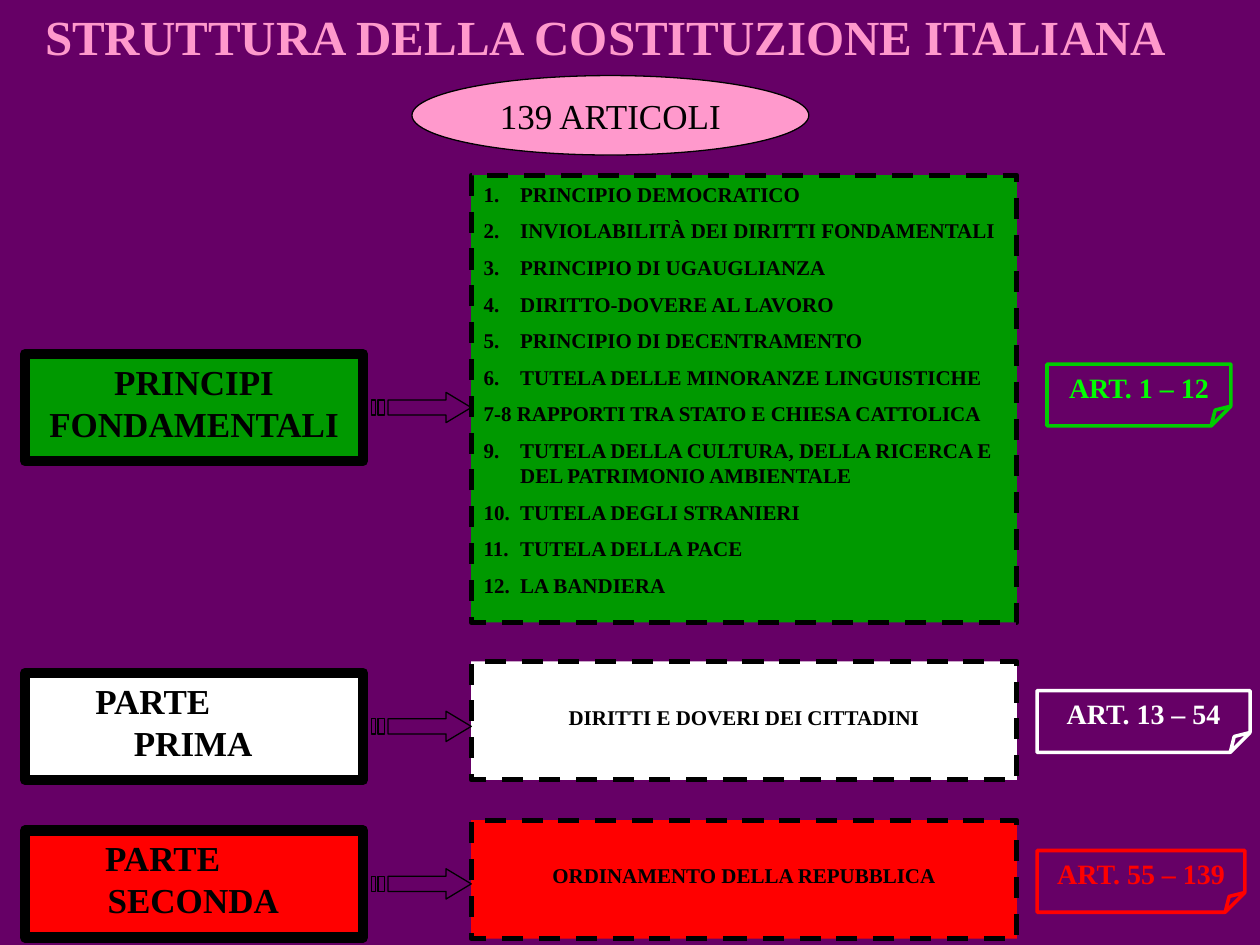
"""Build the slide on the structure of the Italian Constitution."""
from pptx import Presentation
from pptx.dml.color import RGBColor
from pptx.enum.dml import MSO_LINE
from pptx.enum.shapes import MSO_SHAPE as Preset
from pptx.enum.text import MSO_ANCHOR as Anchor, PP_ALIGN as Align
from pptx.oxml.ns import qn
from pptx.util import Pt
from lxml.etree import SubElement

THEME = {
    "font": "Times New Roman",
    "purple": "660066", "pink": "FF99CC", "black": "000000", "white": "FFFFFF",
    "green": "009900", "note_green": "00CC00", "lime": "00FF00", "red": "FF0000",
    "title": 28, "label": 20, "note": 16, "body": 12,
}

TITLE = "STRUTTURA DELLA COSTITUZIONE ITALIANA"
COUNT = "139 ARTICOLI"
PRINCIPLES = [
    "PRINCIPIO DEMOCRATICO",
    "INVIOLABILITÀ DEI DIRITTI FONDAMENTALI",
    "PRINCIPIO DI UGAUGLIANZA",
    "DIRITTO-DOVERE AL LAVORO",
    "PRINCIPIO DI DECENTRAMENTO",
    "TUTELA DELLE MINORANZE LINGUISTICHE",
]
LATER_PRINCIPLES = [
    "7-8 RAPPORTI TRA STATO E CHIESA CATTOLICA",
    "9.\tTUTELA DELLA CULTURA, DELLA RICERCA E DEL PATRIMONIO AMBIENTALE",
    "10.\tTUTELA DEGLI STRANIERI",
    "11.\tTUTELA DELLA PACE",
    "12.\tLA BANDIERA",
]
ROWS = [
    {"label": "PRINCIPI FONDAMENTALI", "label_top": 202.3, "label_format": {},
     "body": None, "body_top": 100.1, "body_height": 255.6, "fill": "green",
     "note": "ART. 1 – 12", "note_box": (598.3, 208.1, 105.1),
     "note_line": "note_green", "note_text": "lime"},
    {"label": "PARTE\vPRIMA", "label_top": 384.5,
     "label_format": {"align": Align.LEFT, "margin": 55, "indent": -22},
     "body": "DIRITTI E DOVERI DEI CITTADINI", "body_top": 378, "body_height": 67.7,
     "fill": "white", "note": "ART. 13 – 54", "note_box": (592.6, 394.6, 121.7),
     "note_line": "white", "note_text": "white"},
    {"label": "PARTE\vSECONDA", "label_top": 474.5,
     "label_format": {"align": Align.LEFT, "margin": 40, "indent": -1.4},
     "body": "ORDINAMENTO DELLA REPUBBLICA", "body_top": 468.7, "body_height": 67.7,
     "fill": "red", "note": "ART. 55 – 139", "note_box": (592.6, 486, 118.8),
     "note_line": "red", "note_text": "red"},
]

LABEL_LEFT, LABEL_WIDTH, LABEL_HEIGHT = 14.4, 193, 61.2
BODY_LEFT, BODY_WIDTH = 269.3, 311.8
NOTE_HEIGHT, NOTE_FOLD = 35.3, 0.32
ARROW_LEFT = 212.4
ARROW_HEAD, ARROW_STEM = 8.64, 4.32
STRIPES = [(0, 2.16), (3.6, 7.2)]
STEM_START, HEAD_START, TIP = 9.36, 42.5, 56.9


def color(name):
    return RGBColor.from_string(THEME[name])


def write(frame, text, size="body", ink="black", bold=True, align=Align.CENTER,
          margin=0, indent=0, numbered=False, before=0, first=True):
    """Write one formatted paragraph into a text frame."""
    paragraph = frame.paragraphs[0] if first else frame.add_paragraph()
    paragraph.text = text
    paragraph.alignment = align
    paragraph.space_before = Pt(before)
    font = paragraph.font
    for target in [font] + [run.font for run in paragraph.runs]:
        target.name, target.size, target.bold = THEME["font"], Pt(THEME[size]), bold
        target.color.rgb = color(ink)
    properties = paragraph._p.get_or_add_pPr()
    properties.set("marL", str(Pt(margin)))
    properties.set("indent", str(Pt(indent)))
    if numbered:
        bullet = properties.makeelement(qn("a:buAutoNum"), {"type": "arabicPeriod"})
        properties.insert_element_before(bullet, "a:tabLst", "a:defRPr", "a:extLst")


def style(shape, fill, line, width, dash=None):
    shape.shadow.inherit = False
    if fill:
        shape.fill.solid()
        shape.fill.fore_color.rgb = color(fill)
    else:
        shape.fill.background()
    shape.line.color.rgb = color(line)
    shape.line.width = Pt(width)
    if dash:
        shape.line.dash_style = dash


def add_box(slide, preset, left, top, width, height, fill, line, weight,
            dash=None, anchor=Anchor.TOP, wrap=True):
    shape = slide.shapes.add_shape(preset, Pt(left), Pt(top), Pt(width), Pt(height))
    style(shape, fill, line, weight, dash)
    shape.text_frame.word_wrap = wrap
    shape.text_frame.vertical_anchor = anchor
    return shape


def set_fold(shape, fraction):
    guides = shape._element.spPr.find(qn("a:prstGeom")).get_or_add_avLst()
    SubElement(guides, qn("a:gd"), name="adj", fmla=f"val {round(fraction * 100000)}")


def add_arrow(slide, middle):
    arrow = [(HEAD_START, -ARROW_HEAD), (HEAD_START, -ARROW_STEM),
             (STEM_START, -ARROW_STEM), (STEM_START, ARROW_STEM),
             (HEAD_START, ARROW_STEM), (HEAD_START, ARROW_HEAD), (TIP, 0)]
    stripes = [[(start, -ARROW_STEM), (start, ARROW_STEM),
                (end, ARROW_STEM), (end, -ARROW_STEM)] for start, end in STRIPES]
    contours = [[(Pt(ARROW_LEFT + x), Pt(middle + y)) for x, y in points]
                for points in [arrow] + stripes]
    builder = slide.shapes.build_freeform(*contours[0][0])
    builder.add_line_segments(contours[0][1:], close=True)
    for points in contours[1:]:
        builder.move_to(*points[0])
        builder.add_line_segments(points[1:], close=True)
    style(builder.convert_to_shape(), None, "black", 0.75)


def add_row(slide, row):
    label = add_box(slide, Preset.RECTANGLE, LABEL_LEFT, row["label_top"], LABEL_WIDTH,
                    LABEL_HEIGHT, row["fill"], "black", 6)
    write(label.text_frame, row["label"], size="label", **row["label_format"])

    body = add_box(slide, Preset.RECTANGLE, BODY_LEFT, row["body_top"], BODY_WIDTH,
                   row["body_height"], row["fill"], "black", 3, MSO_LINE.DASH,
                   Anchor.MIDDLE if row["body"] else Anchor.TOP)
    if row["body"]:
        body.text_frame.margin_bottom = Pt(8)
        write(body.text_frame, row["body"])
    else:
        for index, text in enumerate(PRINCIPLES + LATER_PRINCIPLES):
            write(body.text_frame, text, align=Align.LEFT, margin=20.9, indent=-20.9,
                  numbered=index < len(PRINCIPLES), before=6.5 if index else 0,
                  first=index == 0)

    left, top, width = row["note_box"]
    note = add_box(slide, Preset.FOLDED_CORNER, left, top, width, NOTE_HEIGHT,
                   None, row["note_line"], 2)
    set_fold(note, NOTE_FOLD)
    write(note.text_frame, row["note"], size="note", ink=row["note_text"])
    add_arrow(slide, row["label_top"] + LABEL_HEIGHT / 2)


def main():
    presentation = Presentation()
    presentation.slide_width, presentation.slide_height = Pt(720), Pt(540)
    slide = presentation.slides.add_slide(presentation.slide_layouts[6])
    slide.background.fill.solid()
    slide.background.fill.fore_color.rgb = color("purple")

    title = slide.shapes.add_textbox(Pt(0), Pt(0), Pt(691.9), Pt(41))
    title.text_frame.word_wrap = True
    write(title.text_frame, TITLE, size="title", ink="pink")
    for row in ROWS:
        add_row(slide, row)
    count = add_box(slide, Preset.OVAL, 235.4, 43.2, 226.8, 45.4, "pink", "black", 0.75,
                    anchor=Anchor.MIDDLE, wrap=False)
    write(count.text_frame, COUNT, size="label", bold=False)
    presentation.save("out.pptx")


if __name__ == "__main__":
    main()
